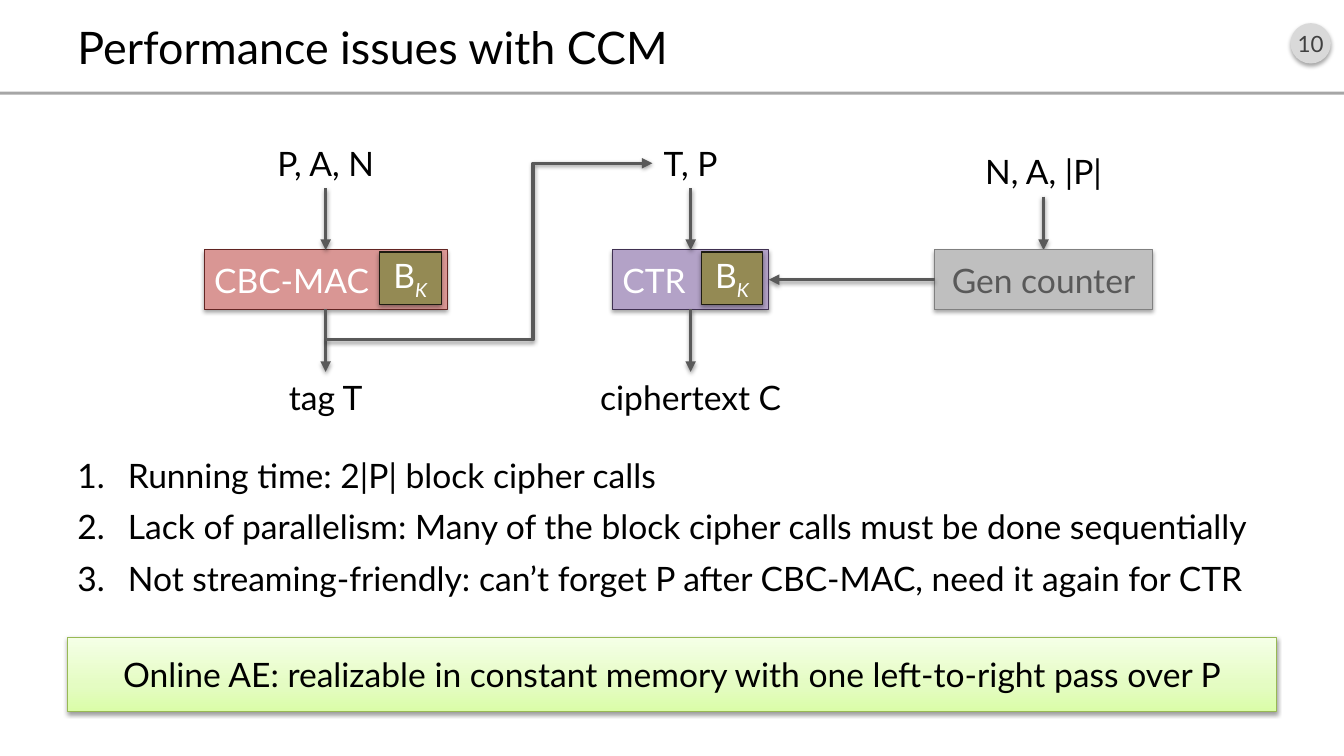
from lxml import etree
from pptx import Presentation
from pptx.dml.color import RGBColor
from pptx.enum.shapes import MSO_CONNECTOR, MSO_SHAPE
from pptx.enum.text import MSO_ANCHOR, PP_ALIGN
from pptx.oxml.ns import qn
from pptx.util import Inches, Pt

RECT, OVAL = MSO_SHAPE.RECTANGLE, MSO_SHAPE.OVAL
STRAIGHT, ELBOW = MSO_CONNECTOR.STRAIGHT, MSO_CONNECTOR.ELBOW
LEFT, CENTER = PP_ALIGN.LEFT, PP_ALIGN.CENTER
TOP, MIDDLE = MSO_ANCHOR.TOP, MSO_ANCHOR.MIDDLE

TITLE = "Performance issues with CCM"
PAGE_NUMBER = "10"
# Center, width, name, fill, line, input, output
CIPHER_STAGES = [
    (3.23, 2.41, "CBC-MAC", "D99694", "632523", "P, A, N", "tag T"),
    (6.85, 1.55, "CTR", "B3A2C7", "403152", "T, P", "ciphertext C"),
]
KEYED_CIPHER = ("B", "K")
COUNTER = (10.35, 2.16, "Gen counter", "N, A, |P|")
ISSUES = [
    "Running time: 2|P| block cipher calls",
    "Lack of parallelism: Many of the block cipher calls must be done sequentially",
    "Not streaming-friendly: can’t forget P after CBC-MAC, need it again for CTR",
]
ONLINE_AE = "Online AE: realizable in constant memory with one left-to-right pass over P"
ONLINE_AE_STOPS = [(0, "DAFDA7"), (35, "E4FCC2"), (100, "F5FFE7")]

WIDTH, HEIGHT = 13.33, 7.5
MARGIN = 0.67
CONTENT = WIDTH - 2 * MARGIN
FONT, BODY_SIZE = "Lato", 24
ARROW_COLOR = "595959"
LABEL_HEIGHT, INPUT_TOP = 0.5, 1.37
STAGE_TOP, STAGE_HEIGHT = 2.48, 0.59
STAGE_BOTTOM = STAGE_TOP + STAGE_HEIGHT
OUTPUT_TOP = 3.69
KEY_WIDTH, KEY_HEIGHT, KEY_INSET = 0.61, 0.52, 0.06
COUNTER_DROP = 0.08

deck = Presentation()
deck.slide_width, deck.slide_height = Inches(WIDTH), Inches(HEIGHT)
page = deck.slides.add_slide(deck.slide_layouts[6])


def color(value):
    return RGBColor.from_string(value)


def child(parent, tag, **attributes):
    return etree.SubElement(parent, qn(tag), {k: str(v) for k, v in attributes.items()})


def add_shadow(effects, opacity, distance):
    """Fill an effect list with a soft shadow that falls straight down."""
    shadow = child(effects, "a:outerShdw", blurRad=Pt(3.1), dist=Pt(distance),
                   dir=5400000, rotWithShape=0)
    black = child(shadow, "a:srgbClr", val="000000")
    child(black, "a:alpha", val=opacity * 1000)


def write(para, text, size=BODY_SIZE, ink="000000", subscript=False):
    span = para.add_run()
    span.text = text
    span.font.name, span.font.size = FONT, Pt(size)
    span.font.color.rgb = color(ink)
    if subscript:
        span.font.italic = True
        span.font._element.set("baseline", "-25000")


def set_text(item, text, align=CENTER, anchor=MIDDLE, wrap=True, side=0.1, **style):
    """Write one paragraph into a shape or box and return it."""
    frame = item.text_frame
    frame.word_wrap, frame.vertical_anchor = wrap, anchor
    frame.margin_left = frame.margin_right = Inches(side)
    para = frame.paragraphs[0]
    para.alignment = align
    write(para, text, **style)
    return para


def add_box(left, top, width, height):
    return page.shapes.add_textbox(*map(Inches, (left, top, width, height)))


def add_label(text, center, top):
    width = 2.1
    set_text(add_box(center - width / 2, top, width, LABEL_HEIGHT), text,
             anchor=TOP, wrap=False)


def add_block(left, top, width, height, fill, line=None, kind=RECT, shadow=(35, 1.8)):
    block = page.shapes.add_shape(kind, *map(Inches, (left, top, width, height)))
    block.shadow.inherit = False
    block.fill.solid()
    block.fill.fore_color.rgb = color(fill)
    if line:
        block.line.color.rgb, block.line.width = color(line), Pt(0.75)
    else:
        block.line.fill.background()
    if shadow:
        add_shadow(block._element.spPr.find(qn("a:effectLst")), *shadow)
    return block


def add_arrow(x1, y1, x2, y2, kind=STRAIGHT):
    arrow = page.shapes.add_connector(kind, *map(Inches, (x1, y1, x2, y2)))
    arrow.line.color.rgb, arrow.line.width = color(ARROW_COLOR), Pt(2.5)
    child(arrow.line._get_or_add_ln(), "a:tailEnd", type="triangle")
    add_shadow(child(arrow._element.spPr, "a:effectLst"), 38, 1.6)
    return arrow


def add_stage(center, width, name, fill, line, source, result):
    left = center - width / 2
    block = add_block(left, STAGE_TOP, width, STAGE_HEIGHT, fill, line)
    set_text(block, name, align=LEFT, ink="FFFFFF")
    key = add_block(left + width - KEY_INSET - KEY_WIDTH, STAGE_TOP + 0.02,
                    KEY_WIDTH, KEY_HEIGHT, "948A54", "1E1C11")
    cipher, subscript = KEYED_CIPHER
    para = set_text(key, cipher, ink="FFFFFF")
    write(para, subscript, ink="FFFFFF", subscript=True)
    add_label(source, center, INPUT_TOP)
    add_arrow(center, INPUT_TOP + LABEL_HEIGHT, center, STAGE_TOP)
    add_arrow(center, STAGE_BOTTOM, center, OUTPUT_TOP)
    add_label(result, center, OUTPUT_TOP)


def add_counter(target):
    """Draw the counter generator and its arrow to the target's right edge."""
    center, width, name, source = COUNTER
    left, middle = center - width / 2, STAGE_TOP + STAGE_HEIGHT / 2
    top = INPUT_TOP + COUNTER_DROP
    add_label(source, center, top)
    add_arrow(center, top + LABEL_HEIGHT, center, STAGE_TOP)
    block = add_block(left, STAGE_TOP, width, STAGE_HEIGHT, "BFBFBF", "808080")
    set_text(block, name, ink="595959")
    add_arrow(left, middle, target, middle)


def add_tag_feedback(start, end):
    arrow = add_arrow(start, 3.37, end, INPUT_TOP + LABEL_HEIGHT / 2, kind=ELBOW)
    geometry = arrow._element.spPr.find(qn("a:prstGeom"))
    guides = geometry.find(qn("a:avLst"))
    if guides is None:
        guides = child(geometry, "a:avLst")
    child(guides, "a:gd", name="adj1", fmla="val 63500")


def add_issues():
    frame = add_box(MARGIN, 4.46, CONTENT, 1.7).text_frame
    frame.word_wrap = True
    for number, issue in enumerate(ISSUES):
        para = frame.add_paragraph() if number else frame.paragraphs[0]
        para.space_before = Pt(8)
        layout = para._p.get_or_add_pPr()
        layout.set("marL", str(Inches(0.5)))
        layout.set("indent", str(-Inches(0.5)))
        child(layout, "a:buFont", typeface="+mj-lt")
        child(layout, "a:buAutoNum", type="arabicPeriod")
        write(para, issue)


def add_online_ae():
    bar = add_block(MARGIN, 6.32, CONTENT, 0.74, "E4FCC2", "98B955", shadow=(38, 1.6))
    bar.fill.gradient()
    bar.fill.gradient_angle = 90
    stops = bar._element.spPr.find(qn("a:gradFill")).find(qn("a:gsLst"))
    for stop in list(stops):
        stops.remove(stop)
    for position, value in ONLINE_AE_STOPS:
        child(child(stops, "a:gs", pos=position * 1000), "a:srgbClr", val=value)
    set_text(bar, ONLINE_AE)


badge = add_block(12.8, 0.23, 0.4, 0.4, "D9D9D9", kind=OVAL)
set_text(badge, PAGE_NUMBER, wrap=False, side=0, size=16, ink="404040")
add_block(0, 0.91, WIDTH, 0.03, "A6A6A6", shadow=None)
set_text(add_box(MARGIN, 0.16, CONTENT, 0.6), TITLE, align=LEFT, size=32)
add_issues()
for stage in CIPHER_STAGES:
    add_stage(*stage)
mac_center = CIPHER_STAGES[0][0]
ctr_center, ctr_width = CIPHER_STAGES[1][:2]
add_counter(ctr_center + ctr_width / 2)
add_tag_feedback(mac_center, ctr_center - 0.38)
add_online_ae()
deck.save("out.pptx")
